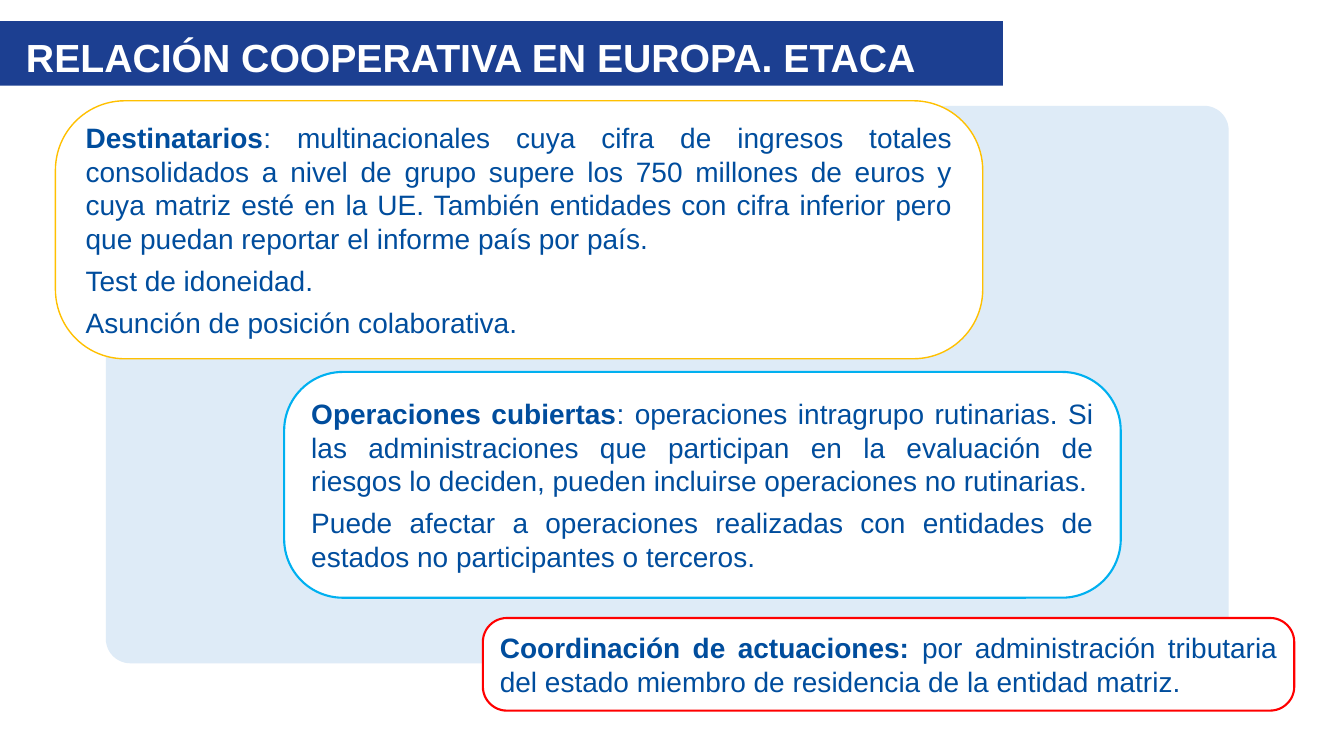
from pptx import Presentation
from pptx.dml.color import RGBColor
from pptx.enum.shapes import MSO_SHAPE
from pptx.enum.text import MSO_ANCHOR, MSO_AUTO_SIZE, PP_ALIGN
from pptx.util import Pt

WHITE = RGBColor(0xFF, 0xFF, 0xFF)
NAVY = RGBColor(0x1C, 0x3F, 0x91)
TEXT_BLUE = RGBColor(0x00, 0x4D, 0x9D)
PALE_BLUE = RGBColor(0xDE, 0xEB, 0xF7)
AMBER = RGBColor(0xFF, 0xC0, 0x00)
SKY = RGBColor(0x00, 0xB0, 0xF0)
RED = RGBColor(0xFF, 0x00, 0x00)

# Box in points, corner rounding, outline, outline width, heading, paragraphs
CARDS = [
    ((39.6, 72, 662.4, 184.3), 0.269, AMBER, 1, "Destinatarios", [
        ": multinacionales cuya cifra de ingresos totales consolidados a nivel de grupo "
        "supere los 750 millones de euros y cuya matriz esté en la UE. También entidades "
        "con cifra inferior pero que puedan reportar el informe país por país.",
        "Test de idoneidad.",
        "Asunción de posición colaborativa."]),
    ((203, 265.7, 597.6, 161.3), 0.26, SKY, 1.5, "Operaciones cubiertas", [
        ": operaciones intragrupo rutinarias. Si las administraciones que participan en la "
        "evaluación de riesgos lo deciden, pueden incluirse operaciones no rutinarias.",
        "Puede afectar a operaciones realizadas con entidades de estados no participantes "
        "o terceros."]),
    ((344.9, 441.4, 579.6, 66.2), 0.26, RED, 1.5, "Coordinación de actuaciones:", [
        " por administración tributaria del estado miembro de residencia de la entidad "
        "matriz."]),
]

prs = Presentation()
prs.slide_width, prs.slide_height = Pt(960), Pt(540)
s = prs.slides.add_slide(prs.slide_layouts[5])


def add_panel(kind, box, fill):
    sp = s.shapes.add_shape(kind, *[Pt(v) for v in box])
    sp.shadow.inherit = False
    sp.fill.solid()
    sp.fill.fore_color.rgb = fill
    sp.line.fill.background()
    return sp


def add_run(p, text, size, color, bold):
    r = p.add_run()
    r.text = text
    r.font.name = "Arial"
    r.font.size = Pt(size)
    r.font.bold = bold
    r.font.color.rgb = color


backdrop = add_panel(MSO_SHAPE.ROUNDED_RECTANGLE, (75.6, 75.6, 802.1, 398.2), PALE_BLUE)
backdrop.adjustments[0] = 0.044

for box, rounding, outline, width, heading, paragraphs in CARDS:
    card = add_panel(MSO_SHAPE.ROUNDED_RECTANGLE, box, WHITE)
    card.adjustments[0] = rounding
    card.line.color.rgb = outline
    card.line.width = Pt(width)
    tf = card.text_frame
    tf.word_wrap = True
    tf.vertical_anchor = MSO_ANCHOR.MIDDLE
    for i, text in enumerate(paragraphs):
        if i == 0:
            p = tf.paragraphs[0]
            add_run(p, heading, 20, TEXT_BLUE, True)
        else:
            p = tf.add_paragraph()
            p.space_before = Pt(6)
        p.alignment = PP_ALIGN.JUSTIFY
        add_run(p, text, 20, TEXT_BLUE, False)

banner = add_panel(MSO_SHAPE.RECTANGLE, (0, 15.1, 716.4, 46.1), NAVY)

title = s.shapes.title
banner.element.addnext(title.element)  # brings the title in front of its banner
title.left, title.top, title.width, title.height = Pt(0), Pt(20.2), Pt(672.5), Pt(74.9)
tf = title.text_frame
tf.word_wrap = True
tf.auto_size = MSO_AUTO_SIZE.NONE
tf.vertical_anchor = MSO_ANCHOR.TOP
p = tf.paragraphs[0]
p.alignment = PP_ALIGN.CENTER
add_run(p, "RELACIÓN COOPERATIVA EN EUROPA. ETACA", 28, WHITE, True)

prs.save("out.pptx")
